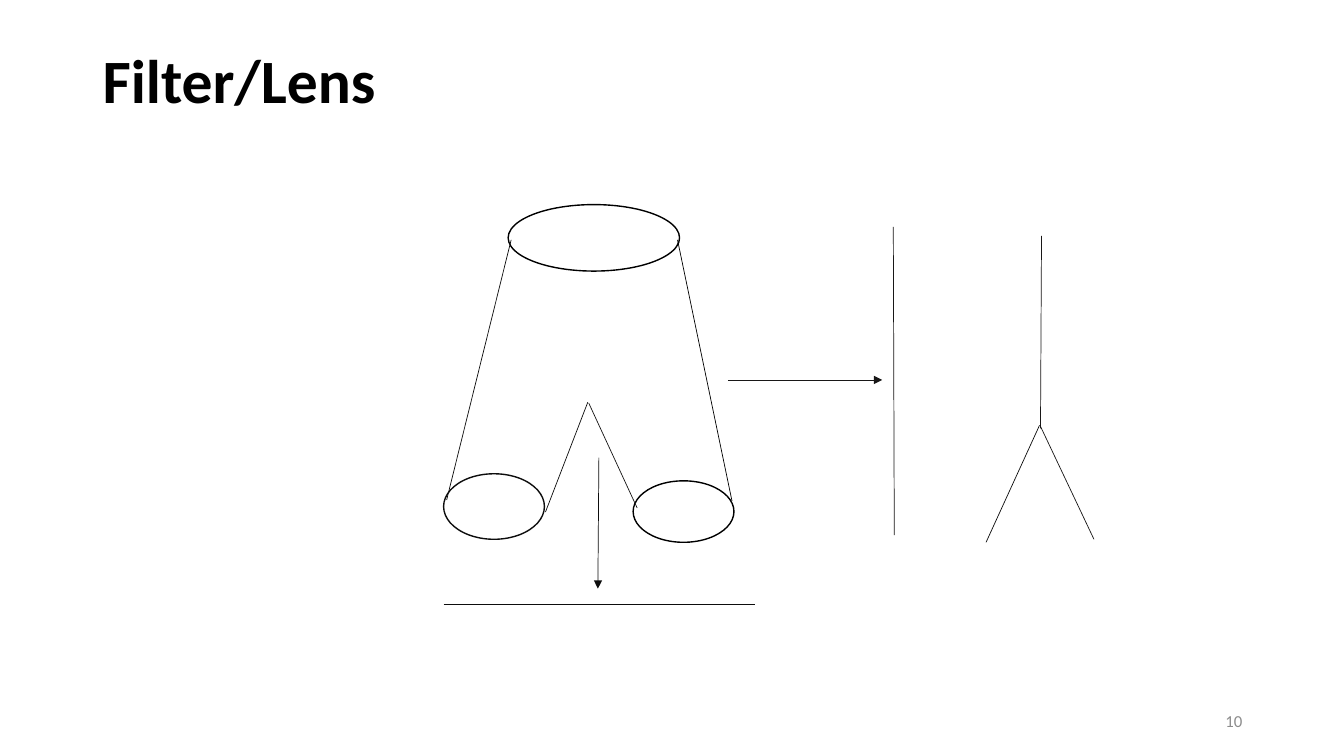
import pptx
import pptx.util
import pptx.dml.color
import pptx.enum.shapes
import pptx.enum.text
import pptx.oxml
import pptx.oxml.ns

# Content: lengths in px, 100 px to the inch
SIZE = (1333, 750)
TEXTS = [
    # words, box, style
    ("Filter/Lens", (92, 40, 1150, 86), "title"),
    ("10", (942, 695, 300, 40), "number"),
]
RINGS = [
    # left, top, width, height, colour
    (628, 477, 100, 61, "black"),
    (440, 470, 100, 65, "dark"),
    (504, 203, 170, 66, "black"),
]
LINES = [
    # from x, y, to x, y, colour
    # trouser sides and crotch
    (672, 238, 726, 497, "black"),
    (507, 238, 443, 496, "dark"),
    (632, 504, 584, 400, "grey"),
    (583, 399, 541, 508, "dark"),
    # side and bottom views
    (886, 225, 887, 531, "grey"),
    (440, 600, 749, 600, "dark"),
    # forked view
    (1032, 423, 1085, 535, "grey"),
    (978, 538, 1031, 422, "dark"),
    (1033, 234, 1032, 425, "grey"),
]
ARROWS = [
    (722, 377, 875, 377, "grey"),
    (594, 454, 593, 584, "dark"),
]

LEFT = pptx.enum.text.PP_ALIGN.LEFT
RIGHT = pptx.enum.text.PP_ALIGN.RIGHT
THEME = {
    "colors": {"white": "FFFFFF", "black": "000000", "dark": "0D0D0D",
               "grey": "181717", "pale": "8C8C8C"},
    "font": "Calibri",
    "title": {"size": 44, "bold": True, "color": "black",
              "align": LEFT, "space": 0.9},
    "number": {"size": 12, "bold": False, "color": "pale",
               "align": RIGHT, "space": 1.0},
    "ring": 1,
    "line": 0.5,
}


def px(*nums):
    return [pptx.util.Emu(n * 9144) for n in nums]


def tint(name):
    return pptx.dml.color.RGBColor.from_string(THEME["colors"][name])


def assign(item, values):
    for key, value in values.items():
        setattr(item, key, value)


def stroke(line, color, width):
    line.color.rgb = tint(color)
    line.width = pptx.util.Pt(width)


def write(slide, words, box, style):
    look = THEME[style]
    frame = slide.shapes.add_textbox(*px(*box)).text_frame
    assign(frame, {"word_wrap": True,
                   "vertical_anchor": pptx.enum.text.MSO_ANCHOR.MIDDLE})
    para = frame.paragraphs[0]
    assign(para, {"alignment": look["align"], "line_spacing": look["space"]})
    run = para.add_run()
    run.text = words
    assign(run.font, {"name": THEME["font"], "bold": look["bold"],
                      "size": pptx.util.Pt(look["size"])})
    run.font.color.rgb = tint(look["color"])


def ring(slide, *box, color):
    oval = slide.shapes.add_shape(
        pptx.enum.shapes.MSO_SHAPE.OVAL, *px(*box))
    oval.shadow.inherit = False
    oval.fill.solid()
    oval.fill.fore_color.rgb = tint("white")
    stroke(oval.line, color, THEME["ring"])


def draw(slide, *ends, color, head=False):
    line = slide.shapes.add_connector(
        pptx.enum.shapes.MSO_CONNECTOR.STRAIGHT, *px(*ends))
    stroke(line.line, color, THEME["line"])
    props = line._element.spPr
    if head:
        tip = pptx.oxml.parse_xml(
            "<a:tailEnd %s type='triangle'/>" % pptx.oxml.ns.nsdecls("a"))
        props.find(pptx.oxml.ns.qn("a:ln")).append(tip)
    props.append(pptx.oxml.parse_xml(
        "<a:effectLst %s/>" % pptx.oxml.ns.nsdecls("a")))


def main():
    deck = pptx.Presentation()
    deck.slide_width, deck.slide_height = px(*SIZE)
    slide = deck.slides.add_slide(deck.slide_layouts[6])

    # Title and slide number
    for words, box, style in TEXTS:
        write(slide, words, box, style)

    # Openings, edges and view arrows
    for *box, color in RINGS:
        ring(slide, *box, color=color)
    for *ends, color in LINES:
        draw(slide, *ends, color=color)
    for *ends, color in ARROWS:
        draw(slide, *ends, color=color, head=True)

    deck.save("out.pptx")


if __name__ == "__main__":
    main()
